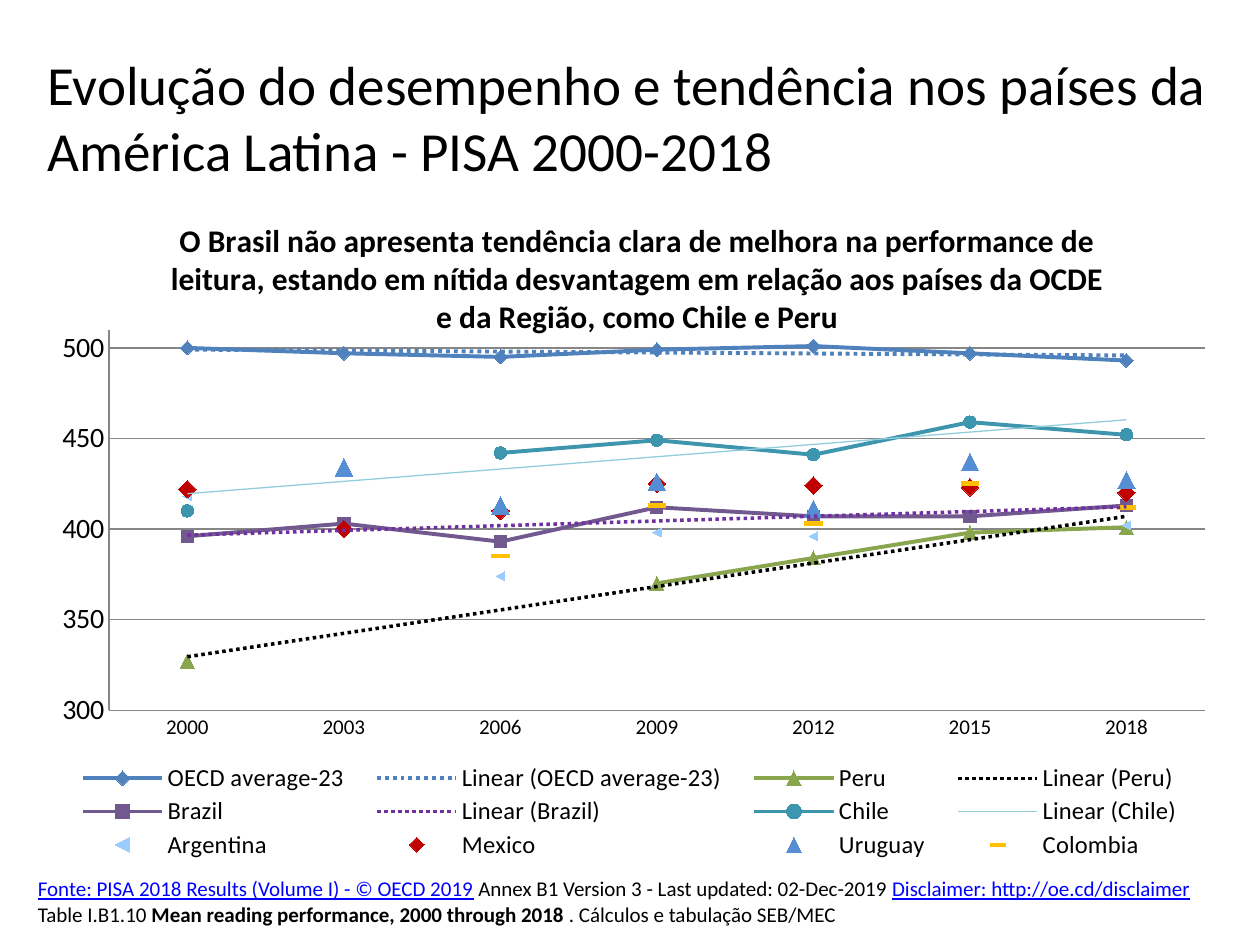
from lxml import etree
from pptx import Presentation
from pptx.chart.data import CategoryChartData
from pptx.dml.color import RGBColor
from pptx.enum import chart as ce, text as te
from pptx.oxml import parse_xml
from pptx.oxml.ns import nsdecls, qn
from pptx.util import Pt

FONT = "Calibri"
BLACK = RGBColor(0, 0, 0)
LINK = RGBColor(0, 0, 255)
GREY = RGBColor(0x86, 0x86, 0x86)
BLUE = RGBColor(0x4F, 0x81, 0xBD)
GREEN = RGBColor(0x89, 0xA5, 0x4E)
PURPLE = RGBColor(0x71, 0x58, 0x8F)
VIOLET = RGBColor(0x70, 0x30, 0xA0)
TEAL = RGBColor(0x3D, 0x96, 0xAE)
PALE = RGBColor(0x93, 0xCD, 0xDD)
SKY = RGBColor(0x99, 0xCC, 0xFF)
RED = RGBColor(0xC0, 0, 0)
AZURE = RGBColor(0x55, 0x8E, 0xD5)
GOLD = RGBColor(0xFF, 0xC0, 0)

TITLE = "Evolução do desempenho e tendência nos países da América Latina - PISA 2000-2018"
CLAIM = ("O Brasil não apresenta tendência clara de melhora na performance de "
         "leitura, estando em nítida desvantagem em relação aos países da OCDE "
         "e da Região, como Chile e Peru")
YEARS = ["2000", "2003", "2006", "2009", "2012", "2015", "2018"]
NONE = None
MARK = ce.XL_MARKER_STYLE
# name, values, colour, marker, marker size, joined, trend (colour, width, dash)
SERIES = [
    ("OECD average-23", (500, 497, 495, 499, 501, 497, 493),
     BLUE, MARK.DIAMOND, 8, True, (BLUE, 2.25, "sysDot")),
    ("Series 2", (NONE,) * 7, RED, MARK.NONE, 5, False, NONE),
    ("Peru", (327, NONE, NONE, 370, 384, 398, 401),
     GREEN, MARK.TRIANGLE, 8, True, (BLACK, 2, "sysDot")),
    ("Brazil", (396, 403, 393, 412, 407, 407, 413),
     PURPLE, MARK.SQUARE, 7, True, (VIOLET, 2, "sysDot")),
    ("Chile", (410, NONE, 442, 449, 441, 459, 452),
     TEAL, MARK.CIRCLE, 7, True, (PALE, 0.75, "solid")),
    ("Argentina", (418, NONE, 374, 398, 396, NONE, 402),
     SKY, NONE, 5, False, NONE),
    ("Mexico", (422, 400, 410, 425, 424, 423, 420),
     RED, MARK.DIAMOND, 10, False, NONE),
    ("Uruguay", (NONE, 434, 413, 426, 411, 437, 427),
     AZURE, MARK.TRIANGLE, 10, False, NONE),
    ("Colombia", (NONE, NONE, 385, 413, 403, 425, 412),
     GOLD, MARK.DASH, 10, False, NONE),
]
# text, is link, is bold
SOURCE = [
    [("Fonte: PISA 2018 Results (Volume I) - © OECD 2019", True, False),
     (" Annex B1 Version 3 - Last updated: 02-Dec-2019 ", False, False),
     ("Disclaimer: http://oe.cd/disclaimer", True, False)],
    [("Table I.B1.10 ", False, False),
     ("Mean reading performance, 2000 through 2018", False, True),
     (" . Cálculos e tabulação SEB/MEC", False, False)],
]


def style(font, size, bold=NONE):
    font.name, font.size, font.bold = FONT, Pt(size), bold
    font.color.rgb = BLACK


def add_box(slide, left, top, width, height):
    frame = slide.shapes.add_textbox(Pt(left), Pt(top), Pt(width), Pt(height)).text_frame
    frame.word_wrap = True
    return frame


def place(node, index, **parts):
    """Give a chart part a manual layout, as the child at index."""
    for old in node.findall(qn("c:layout")):
        node.remove(old)
    layout = etree.Element(qn("c:layout"))
    manual = etree.SubElement(layout, qn("c:manualLayout"))
    for tag, val in parts.items():
        etree.SubElement(manual, qn("c:" + tag)).set("val", str(val))
    node.insert(index, layout)


def add_trend(series, color, width, dash):
    trend = parse_xml(
        f'<c:trendline {nsdecls("c", "a")}><c:spPr><a:ln w="{Pt(width)}">'
        f'<a:solidFill><a:srgbClr val="{color}"/></a:solidFill>'
        f'<a:prstDash val="{dash}"/></a:ln></c:spPr>'
        '<c:trendlineType val="linear"/><c:dispRSqr val="0"/>'
        '<c:dispEq val="0"/></c:trendline>')
    series._element.find(qn("c:cat")).addprevious(trend)


def draw_series(series, color, mark, size, joined, trend):
    series.smooth = False
    line = series.format.line
    if joined:
        line.color.rgb, line.width = color, Pt(2.25)
    else:
        line.fill.background()
    marker = series.marker
    if mark is not NONE:
        marker.style = mark
    marker.size = size
    marker.format.fill.solid()
    marker.format.fill.fore_color.rgb = color
    marker.format.line.fill.background()
    if trend:
        add_trend(series, *trend)


def add_chart(slide):
    data = CategoryChartData(number_format="0")
    data.categories = YEARS
    for name, vals, *_ in SERIES:
        data.add_series(name, vals)
    chart = slide.shapes.add_chart(ce.XL_CHART_TYPE.LINE_MARKERS, Pt(19.5), Pt(106),
                                   Pt(680.5), Pt(391), data).chart
    style(chart.font, 18)
    chart.plots[0].vary_by_categories = False
    for series, (_, _, *look) in zip(chart.plots[0].series, SERIES):
        draw_series(series, *look)

    chart.has_title = True
    para = chart.chart_title.text_frame.paragraphs[0]
    para.text = CLAIM
    style(para.font, 18, True)
    place(chart.chart_title._element, 1, xMode="edge", yMode="edge", x=0.11, y=0.04)
    place(chart._chartSpace.chart.plotArea, 0, layoutTarget="inner", xMode="edge",
          yMode="edge", x=0.063, y=0.211, w=0.92, h=0.556)

    chart.has_legend = True
    legend = chart.legend
    legend.position = ce.XL_LEGEND_POSITION.BOTTOM
    legend.include_in_layout = False
    style(legend.font, 14)
    hide = parse_xml(f'<c:legendEntry {nsdecls("c")}><c:idx val="1"/>'
                     '<c:delete val="1"/></c:legendEntry>')
    legend._element.find(qn("c:legendPos")).addnext(hide)
    place(legend._element, 2, xMode="edge", yMode="edge", x=0.02, y=0.84, w=0.96, h=0.15)

    for axis, size in ((chart.category_axis, 12), (chart.value_axis, 16)):
        axis.major_tick_mark = axis.minor_tick_mark = ce.XL_TICK_MARK.NONE
        style(axis.tick_labels.font, size)
        axis.format.line.color.rgb = GREY
    axis.minimum_scale, axis.maximum_scale, axis.major_unit = 300, 510, 50
    axis.has_major_gridlines = True
    axis.major_gridlines.format.line.color.rgb = GREY
    axis.tick_labels.number_format = "0"
    axis.tick_labels.number_format_is_linked = False


def main():
    deck = Presentation()
    deck.slide_width, deck.slide_height = Pt(720), Pt(540)
    slide = deck.slides.add_slide(deck.slide_layouts[6])

    head = add_box(slide, 20, 21.5, 680.5, 90)
    head.vertical_anchor = te.MSO_ANCHOR.MIDDLE
    head.text = TITLE
    style(head.paragraphs[0].font, 31.5)

    add_chart(slide)

    foot = add_box(slide, 14.5, 497, 685.5, 36)
    for i, runs in enumerate(SOURCE):
        para = foot.add_paragraph() if i else foot.paragraphs[0]
        style(para.font, 12)
        for words, link, bold in runs:
            run = para.add_run()
            run.text = words
            run.font.bold = bold
            if link:
                run.font.underline = True
                run.font.color.rgb = LINK
    deck.save("out.pptx")


if __name__ == "__main__":
    main()
